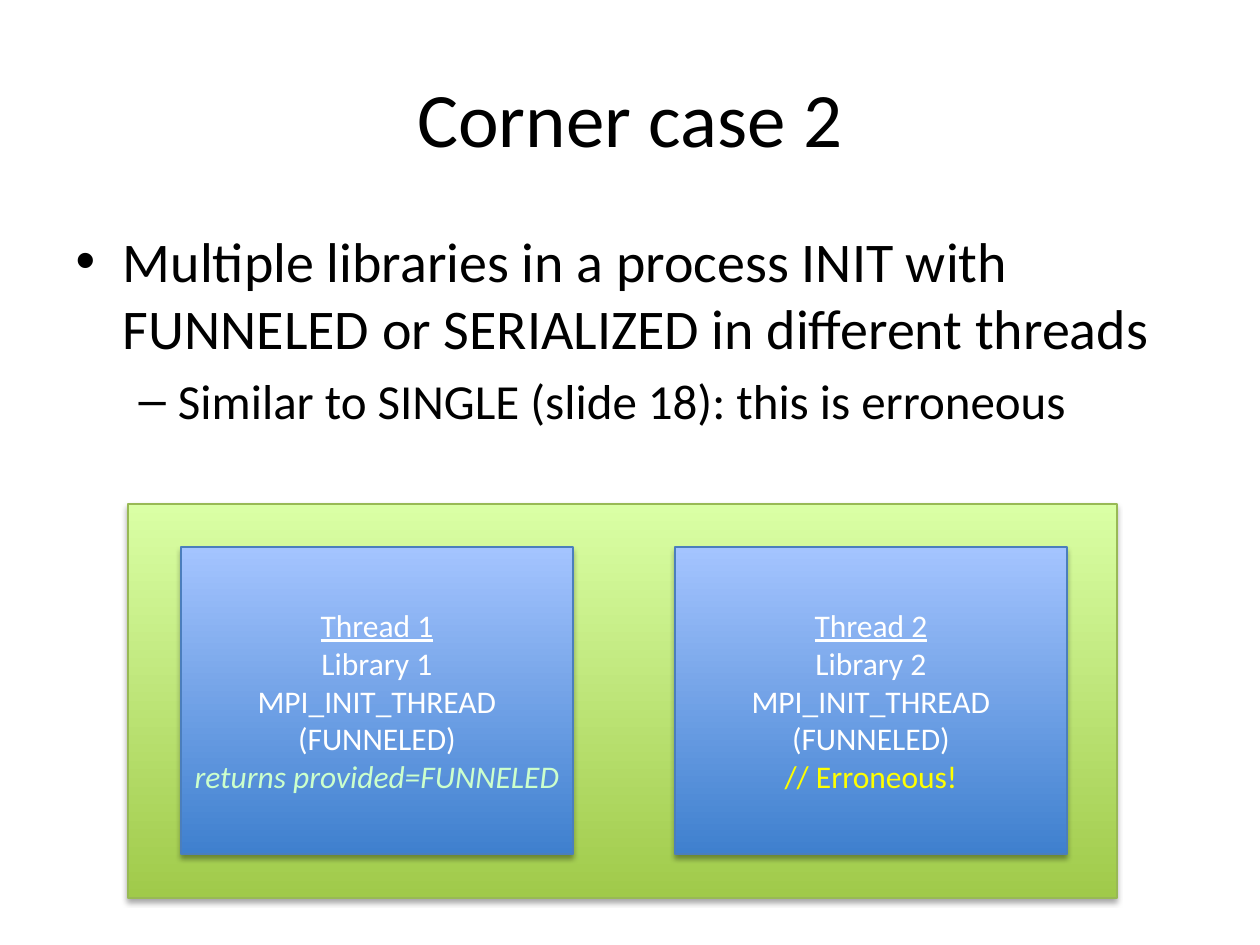
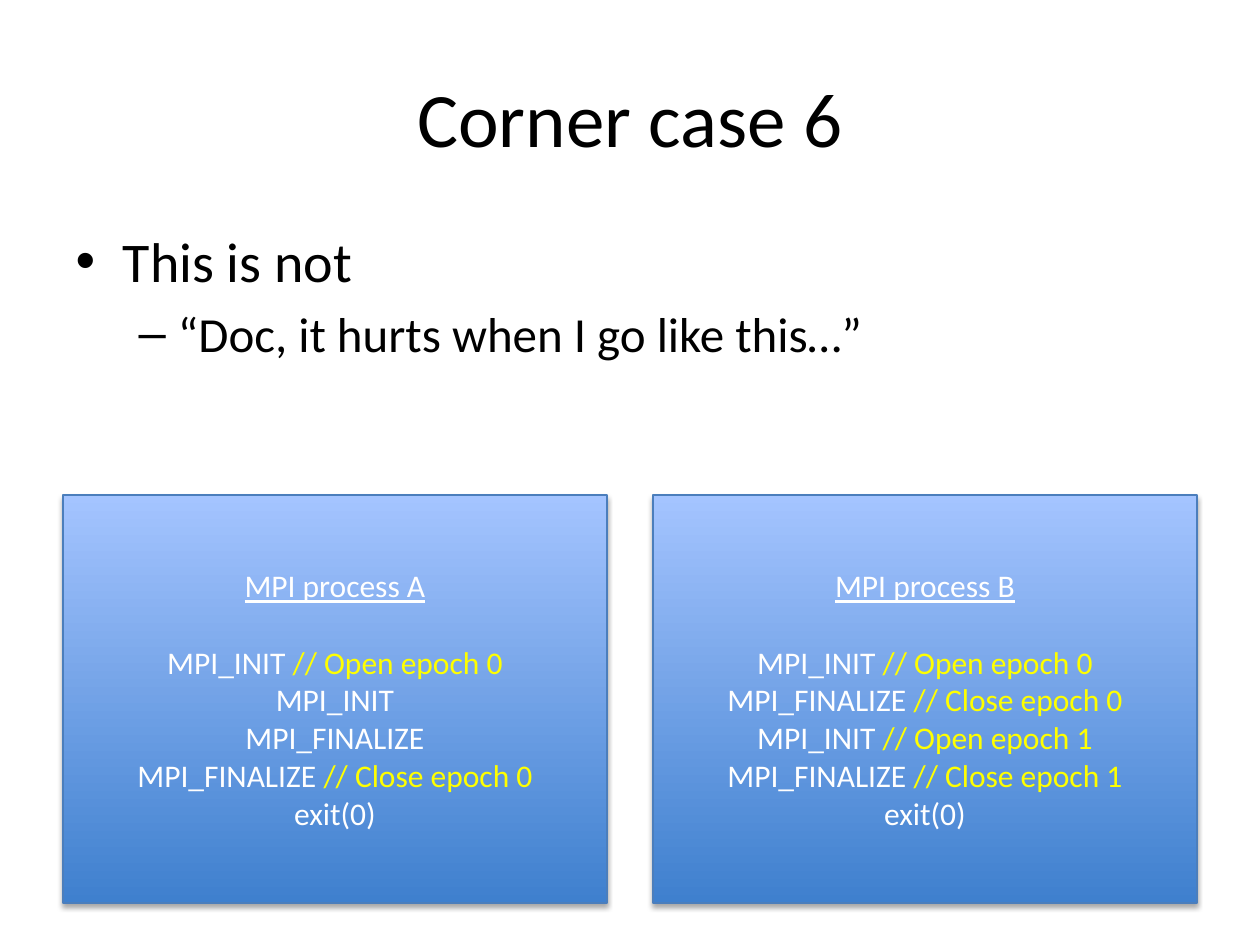
from lxml.etree import SubElement
from pptx import Presentation
from pptx.dml.color import RGBColor
from pptx.enum.shapes import MSO_SHAPE
from pptx.enum.text import MSO_ANCHOR, PP_ALIGN
from pptx.oxml.ns import qn
from pptx.util import Inches, Pt

PX = Inches(1) / 126
FONT = "Calibri"

BLACK = RGBColor(0x00, 0x00, 0x00)
WHITE = RGBColor(0xFF, 0xFF, 0xFF)
YELLOW = RGBColor(0xFF, 0xFF, 0x00)
MINT = RGBColor(0xCC, 0xFF, 0xCC)
BLUE_DARK = RGBColor(0x3F, 0x80, 0xCE)
BLUE_LIGHT = RGBColor(0xA4, 0xC4, 0xFF)
BLUE_LINE = RGBColor(0x4B, 0x7E, 0xBC)
GREEN_DARK = RGBColor(0xA0, 0xCA, 0x4A)
GREEN_LIGHT = RGBColor(0xDA, 0xFF, 0xA5)
GREEN_LINE = RGBColor(0x98, 0xB9, 0x55)

# Gradient bottom, gradient top, outline
BLUE = (BLUE_DARK, BLUE_LIGHT, BLUE_LINE)
GREEN = (GREEN_DARK, GREEN_LIGHT, GREEN_LINE)

TITLE_BOX = (63, 38, 1134, 157)


def emu(box):
    return [round(length * PX) for length in box]


def move(shape, box):
    shape.left, shape.top, shape.width, shape.height = emu(box)


def set_font(font, size, colour):
    font.name = FONT
    font.size = Pt(size)
    font.color.rgb = colour


def add_soft_shadow(shape):
    shape.shadow.inherit = False
    effects = shape._element.spPr.find(qn("a:effectLst"))
    shadow = SubElement(effects, qn("a:outerShdw"), blurRad=str(Pt(3.1)),
                        dist=str(Pt(1.8)), dir="5400000", rotWithShape="0")
    colour = SubElement(shadow, qn("a:srgbClr"), val="000000")
    SubElement(colour, qn("a:alpha"), val="35000")


def add_panel(page, box, palette):
    bottom, top, outline = palette
    panel = page.shapes.add_shape(MSO_SHAPE.RECTANGLE, *emu(box))
    panel.fill.gradient()
    panel.fill.gradient_angle = 90
    for stop, colour in zip(panel.fill.gradient_stops, (bottom, top)):
        stop.color.rgb = colour
    panel.line.color.rgb = outline
    panel.line.width = Pt(0.75)
    add_soft_shadow(panel)
    return panel


def write_code(panel, heading, lines, heading_gap):
    """Each line is a call, a comment, or both; comments are coloured."""
    frame = panel.text_frame
    frame.word_wrap = True
    frame.vertical_anchor = MSO_ANCHOR.MIDDLE
    for index, line in enumerate([heading, *lines]):
        para = frame.paragraphs[0] if index == 0 else frame.add_paragraph()
        para.alignment = PP_ALIGN.CENTER
        set_font(para.font, 18, WHITE)
        if index == 0:
            para.font.underline = True
        elif index == 1:
            para.space_before = Pt(heading_gap)
        call, slashes, comment = line.partition("//")
        if call:
            para.add_run().text = call
        if slashes:
            span = para.add_run()
            span.text = slashes + comment
            set_font(span.font, 18, YELLOW)
        if line.startswith("returns"):
            para.font.italic = True
            para.font.color.rgb = MINT


def add_code_pair(page, box, gap, listings, heading_gap=0):
    """Two equal blue panels side by side fill the box."""
    left, top, width, height = box
    panel_width = (width - gap) // 2
    for column, (heading, lines) in enumerate(listings):
        panel_left = left + column * (panel_width + gap)
        panel = add_panel(page, (panel_left, top, panel_width, height), BLUE)
        write_code(panel, heading, lines, heading_gap)


def add_threads(page, box, listings):
    """A green process frame holding two threads."""
    left, top, width, height = box
    inner = (left + 53, top + 43, width - 103, height - 87)
    add_code_pair(page, inner, 102, listings)


def add_page(deck, title, bullets, body_width):
    page = deck.slides.add_slide(deck.slide_layouts[1])
    heading, body = page.placeholders
    # Title
    move(heading, TITLE_BOX)
    heading.text_frame.text = title
    heading.text_frame.vertical_anchor = MSO_ANCHOR.MIDDLE
    para = heading.text_frame.paragraphs[0]
    para.alignment = PP_ALIGN.CENTER
    set_font(para.font, 44, BLACK)
    # Bullets, one level deeper each
    move(body, (63, 220, body_width, 624))
    body.text_frame.text = "\n".join(bullets)
    for level, para in enumerate(body.text_frame.paragraphs):
        para.level = level
        set_font(para.font, 32 - 4 * level, BLACK)
    return page


def build_thread_case(deck):
    page = add_page(deck, "Corner case 2", [
        "Multiple libraries in a process INIT with FUNNELED or SERIALIZED "
        "in different threads",
        "Similar to SINGLE (slide 18): this is erroneous"], 1134)
    results = ["returns provided=FUNNELED", "// Erroneous!"]
    listings = [
        (f"Thread {number}",
         [f"Library {number}", "MPI_INIT_THREAD", "(FUNNELED)", result])
        for number, result in enumerate(results, 1)]
    process_box = (128, 504, 989, 394)
    process = add_panel(page, process_box, GREEN)
    # The process frame lies behind the title and bullets
    page.shapes._spTree.insert(2, process._element)
    add_threads(page, process_box, listings)


def build_epoch_case(deck):
    page = add_page(deck, "Corner case 6", [
        "This is not", "“Doc, it hurts when I go like this…”"], 1197)
    nested = ["MPI_INIT // Open epoch 0", "MPI_INIT", "MPI_FINALIZE",
              "MPI_FINALIZE // Close epoch 0", "exit(0)"]
    repeated = [line for epoch in range(2) for line in (
        f"MPI_INIT // Open epoch {epoch}",
        f"MPI_FINALIZE // Close epoch {epoch}")] + ["exit(0)"]
    listings = [("MPI process A", nested), ("MPI process B", repeated)]
    add_code_pair(page, (63, 495, 1134, 408), 46, listings, heading_gap=22)


def main():
    deck = Presentation()
    deck.slide_width, deck.slide_height = Inches(10), Inches(7.5)
    build_thread_case(deck)
    build_epoch_case(deck)
    deck.save("out.pptx")


if __name__ == "__main__":
    main()
